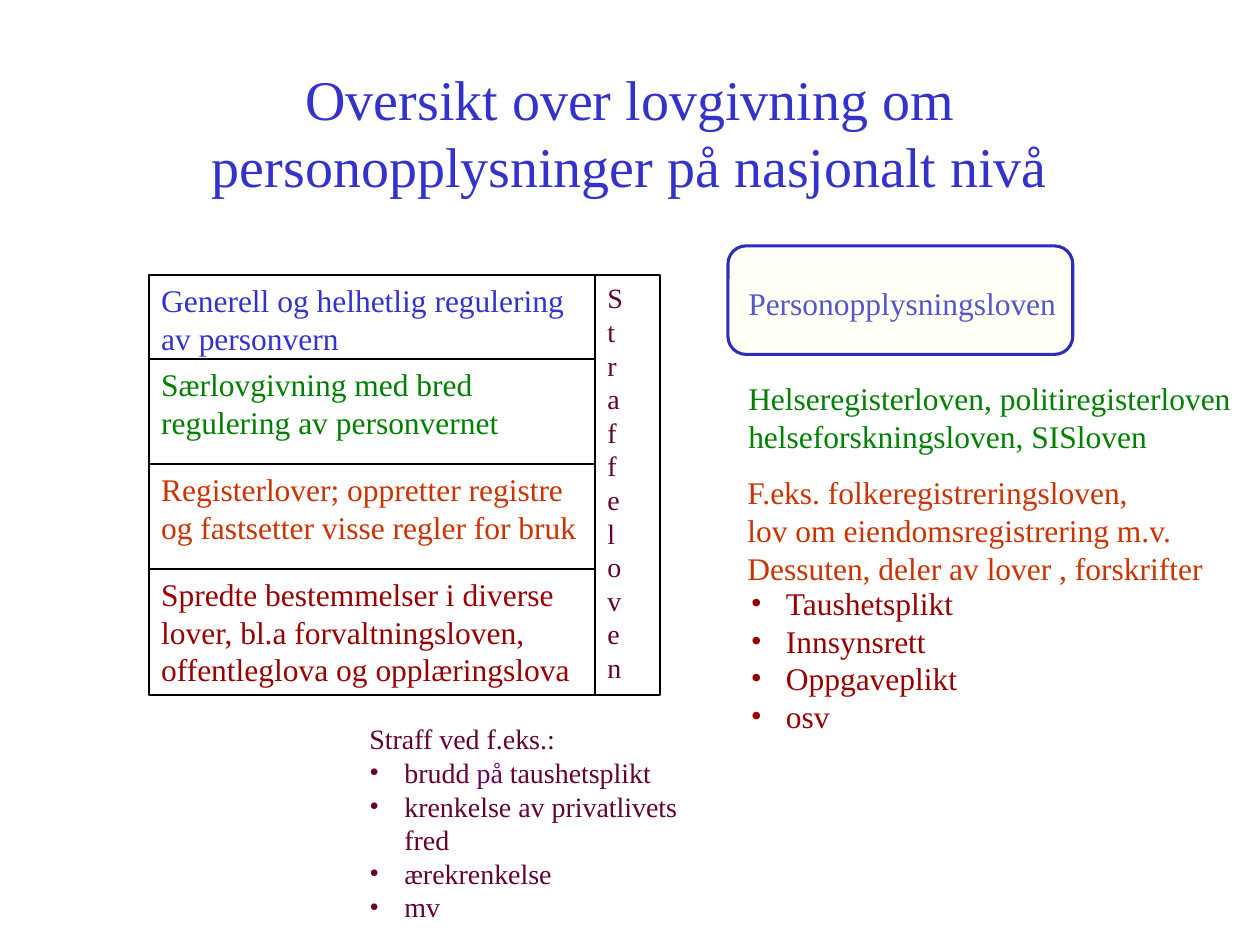
from dataclasses import dataclass

from lxml.etree import SubElement
from pptx import Presentation
from pptx.dml.color import RGBColor as Color
from pptx.enum.shapes import MSO_SHAPE as Shape
from pptx.enum.text import MSO_ANCHOR as Anchor, PP_ALIGN as Align
from pptx.oxml.ns import qn
from pptx.util import Pt


@dataclass(frozen=True)
class Theme:
    font: str = "Times New Roman"
    blue: str = "3333CC"
    green: str = "008000"
    orange: str = "CC3300"
    red: str = "990000"
    plum: str = "660033"
    purple: str = "660066"
    white: str = "FFFFFF"
    black: str = "000000"
    cream: str = "FFFFCC"
    frame: str = "2D2DB9"
    title: int = 32
    body: int = 18
    small: int = 16
    hanging: int = 20


class PageBuilder:
    def __init__(self, page, theme):
        self.page = page
        self.theme = theme

    def fill_text(self, frame, paragraphs, color, size, align=Align.LEFT, bullets_from=None):
        """Each paragraph is a string or a list of (text, colour) runs."""
        for index, content in enumerate(paragraphs):
            para = frame.paragraphs[0] if index == 0 else frame.add_paragraph()
            if bullets_from is not None and index >= bullets_from:
                self.add_bullet(para)
            para.alignment = align
            runs = [(content, color)] if isinstance(content, str) else content
            for text, run_color in runs:
                for line_index, line in enumerate(text.split("\n")):
                    if line_index:
                        para.add_line_break()
                    span = para.add_run()
                    span.text = line
                    span.font.name = self.theme.font
                    span.font.size = Pt(size)
                    span.font.color.rgb = Color.from_string(run_color)

    def add_bullet(self, para):
        props = para._p.get_or_add_pPr()
        props.set("marL", str(Pt(self.theme.hanging)))
        props.set("indent", str(-Pt(self.theme.hanging)))
        SubElement(props, qn("a:buFont")).set("typeface", self.theme.font)
        SubElement(props, qn("a:buChar")).set("char", "•")

    def text(self, place, paragraphs, color, size, wrap=False, anchor=Anchor.TOP, **options):
        box = self.page.shapes.add_textbox(*map(Pt, place))
        box.text_frame.word_wrap = wrap
        box.text_frame.vertical_anchor = anchor
        self.fill_text(box.text_frame, paragraphs, color, size, **options)

    def shape(self, kind, place, fill, line, width):
        box = self.page.shapes.add_shape(kind, *map(Pt, place))
        box.shadow.inherit = False
        box.fill.solid()
        box.fill.fore_color.rgb = Color.from_string(fill)
        box.line.color.rgb = Color.from_string(line)
        box.line.width = Pt(width)
        return box

    def panel(self, place, paragraphs, color, size):
        box = self.shape(Shape.RECTANGLE, place, self.theme.white, self.theme.black, 1)
        box.text_frame.word_wrap = True
        box.text_frame.vertical_anchor = Anchor.TOP
        self.fill_text(box.text_frame, paragraphs, color, size)

    def highlight(self, place, opacity):
        box = self.shape(Shape.ROUNDED_RECTANGLE, place, self.theme.cream, self.theme.frame, 1.75)
        tint = box._element.spPr.find(qn("a:solidFill"))[0]
        SubElement(tint, qn("a:alpha")).set("val", str(opacity * 1000))


def main():
    deck = Presentation()
    deck.slide_width, deck.slide_height = Pt(720), Pt(540)
    theme = Theme()
    builder = PageBuilder(deck.slides.add_slide(deck.slide_layouts[6]), theme)

    # Title
    builder.text((54, 30, 612, 90),
                 ["Oversikt over lovgivning om personopplysninger på nasjonalt nivå"],
                 theme.blue, theme.title, wrap=True, anchor=Anchor.MIDDLE, align=Align.CENTER)

    # Stacked levels of legislation
    levels = [
        (48, theme.blue, "Generell og helhetlig regulering\nav personvern"),
        (60, theme.green, "Særlovgivning med bred\nregulering av personvernet"),
        (60, theme.orange, "Registerlover; oppretter registre og fastsetter visse regler for bruk"),
        (72, theme.red, "Spredte bestemmelser i diverse lover, bl.a forvaltningsloven, "
                        "offentleglova og opplæringslova"),
    ]
    stack_top = top = 157
    for height, color, text in levels:
        builder.panel((85, top, 256, height), [text], color, theme.body)
        top += height

    # Penal code running beside every level, one letter a line
    builder.panel((340, stack_top, 37, top - stack_top), list("Straffeloven"),
                  theme.plum, theme.small)

    # Examples for each level
    builder.text((420.5, 159, 192, 51), ["Personopplysningsloven"], theme.blue, theme.body)
    builder.text((420.5, 213, 294.5, 51),
                 ["Helseregisterloven, politiregisterloven", "helseforskningsloven, SISloven"],
                 theme.green, theme.body)
    builder.text((420, 267, 278, 73),
                 ["F.eks. folkeregistreringsloven,", "lov om eiendomsregistrering m.v.",
                  "Dessuten, deler av lover , forskrifter"],
                 theme.orange, theme.body)
    builder.text((422, 330, 180, 93),
                 ["Taushetsplikt", "Innsynsrett", "Oppgaveplikt", "osv"],
                 theme.red, theme.body, wrap=True, bullets_from=0)

    # Punishable breaches
    breach = [("brudd", theme.plum), (" på", theme.purple), (" taushetsplikt", theme.plum)]
    builder.text((204, 409, 211, 122),
                 ["Straff ved f.eks.:", breach, "krenkelse av privatlivets fred",
                  "ærekrenkelse", "mv"],
                 theme.plum, theme.small, wrap=True, bullets_from=1)

    # Frame over the general act
    builder.highlight((416, 140.5, 197, 62), opacity=17)

    deck.save("out.pptx")


if __name__ == "__main__":
    main()
